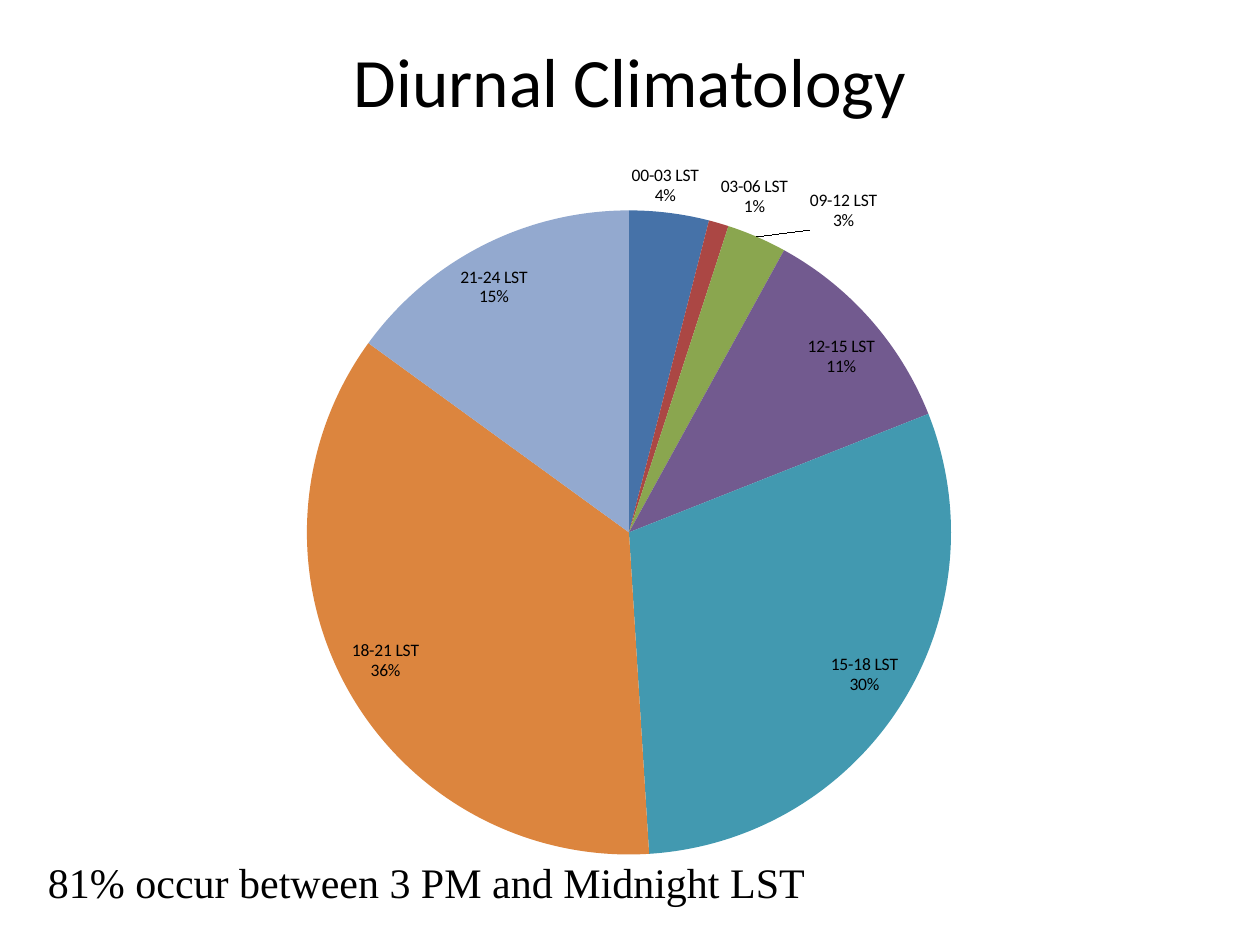
import pptx
import pptx.chart.data
import pptx.dml.color
import pptx.enum.chart
import pptx.enum.text
import pptx.oxml
import pptx.util
from pptx.util import Inches

THEME = {
    "ink": "000000",
    "slices": ["4672A8", "AB4744", "8AA64F", "725A8F", "4299B0", "DC853E", "93A9CF"],
    "title": {"name": "Calibri", "size": pptx.util.Pt(39.6), "bold": False},
    "labels": {"name": "Calibri", "size": pptx.util.Pt(10), "bold": False},
    "takeaway": {"name": "Times New Roman", "size": pptx.util.Pt(24), "bold": False},
}

SHARE_BY_PERIOD = {
    "00-03 LST": 4,
    "03-06 LST": 1,
    "09-12 LST": 3,
    "12-15 LST": 11,
    "15-18 LST": 30,
    "18-21 LST": 36,
    "21-24 LST": 15,
}

# Pie area as fractions of the chart frame
PIE_AREA = {"x": 0.19, "y": 0.09, "w": 0.58, "h": 0.89}


def apply_format(target, values):
    for attribute, value in values.items():
        setattr(target, attribute, value)


def style_font(font, role):
    apply_format(font, THEME[role])
    font.color.rgb = pptx.dml.color.RGBColor.from_string(THEME["ink"])


def write_line(frame, wording, role):
    paragraph = frame.paragraphs[0]
    paragraph.alignment = pptx.enum.text.PP_ALIGN.CENTER
    run = paragraph.add_run()
    run.text = wording
    style_font(run.font, role)


def add_title(slide, wording):
    title = slide.shapes.title
    apply_format(title, {"left": Inches(0.5), "top": Inches(0.3),
                         "width": Inches(9), "height": Inches(1.25)})
    apply_format(title.text_frame, {
        "vertical_anchor": pptx.enum.text.MSO_ANCHOR.TOP, "margin_top": 0})
    write_line(title.text_frame, wording, "title")


def place_pie(chart):
    edges = "".join(f'<c:{key}Mode val="edge"/>' for key in "xy")
    sizes = "".join(f'<c:{key} val="{value}"/>' for key, value in PIE_AREA.items())
    layout = pptx.oxml.parse_xml(
        '<c:layout xmlns:c="http://schemas.openxmlformats.org/drawingml/2006/chart">'
        f'<c:manualLayout><c:layoutTarget val="inner"/>{edges}{sizes}'
        "</c:manualLayout></c:layout>")
    plot_area = chart.plots[0]._element.getparent().getparent()
    for previous in plot_area.xpath("c:layout"):
        plot_area.remove(previous)
    plot_area.insert(0, layout)


def add_period_pie(slide):
    periods = pptx.chart.data.CategoryChartData(number_format="General")
    periods.categories = list(SHARE_BY_PERIOD)
    periods.add_series("Series 1", list(SHARE_BY_PERIOD.values()))
    chart = slide.shapes.add_chart(
        pptx.enum.chart.XL_CHART_TYPE.PIE,
        Inches(0.75), Inches(1.17), Inches(8.75), Inches(5.75), periods).chart
    apply_format(chart, {"has_title": False, "has_legend": False})
    style_font(chart.font, "labels")

    # Slices
    pie = chart.plots[0]
    pie.vary_by_categories = True
    for index, colour in enumerate(THEME["slices"]):
        fill = pie.series[0].points[index].format.fill
        fill.solid()
        fill.fore_color.rgb = pptx.dml.color.RGBColor.from_string(colour)

    # Period and percentage labels
    labels = pie.series[0].data_labels
    apply_format(labels, {
        "show_category_name": True, "show_percentage": True, "show_value": False,
        "number_format": "0%", "number_format_is_linked": False,
        "position": pptx.enum.chart.XL_LABEL_POSITION.BEST_FIT})
    style_font(labels.font, "labels")
    place_pie(chart)


def add_takeaway(slide, wording):
    takeaway = slide.shapes.add_textbox(
        Inches(0.25), Inches(6.75), Inches(6.27), Inches(0.5))
    apply_format(takeaway.text_frame, {
        "word_wrap": False,
        "auto_size": pptx.enum.text.MSO_AUTO_SIZE.SHAPE_TO_FIT_TEXT})
    write_line(takeaway.text_frame, wording, "takeaway")


def main():
    presentation = pptx.Presentation()
    apply_format(presentation, {"slide_width": Inches(10), "slide_height": Inches(7.5)})
    slide = presentation.slides.add_slide(presentation.slide_layouts.get_by_name("Title Only"))
    add_title(slide, "Diurnal Climatology")
    add_period_pie(slide)
    add_takeaway(slide, "81% occur between 3 PM and Midnight LST")
    presentation.save("out.pptx")


if __name__ == "__main__":
    main()
